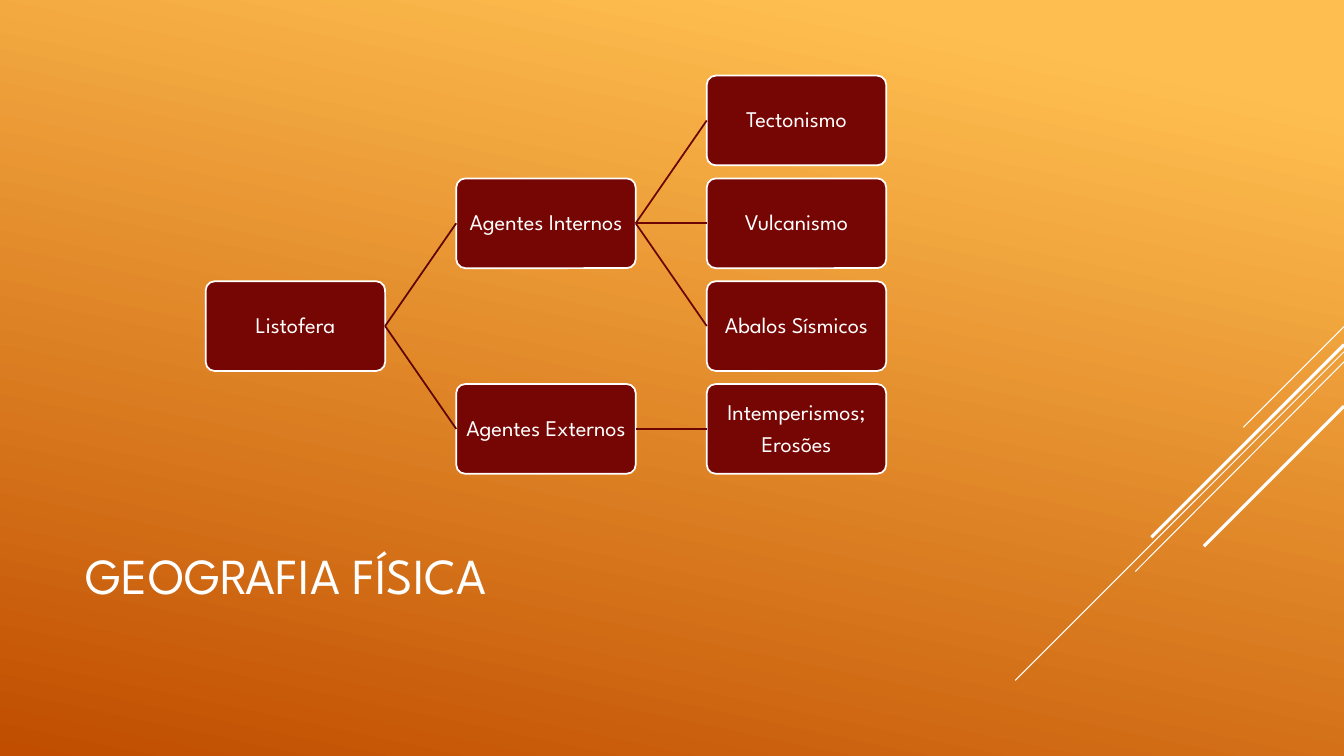
import pptx
import pptx.dml.color
import pptx.enum.shapes
import pptx.enum.text
import pptx.oxml
import pptx.util
from dataclasses import dataclass
from pptx.util import Inches


@dataclass(frozen=True)
class Theme:
    font: str = "League Spartan"
    title_size: int = 36
    box_size: int = 16
    white: str = "FFFFFF"
    box_fill: str = "760603"
    first_link: str = "5E0502"
    second_link: str = "6B0503"
    sky: str = "FFBF50"
    earth: str = "C04D00"


theme = Theme()


def write_text(frame, lines, size, paragraph_format):
    """Fill a text frame with one vertically centred paragraph per line."""
    frame.word_wrap = True
    frame.vertical_anchor = pptx.enum.text.MSO_ANCHOR.MIDDLE
    for index, line in enumerate(lines):
        paragraph = frame.paragraphs[0] if index == 0 else frame.add_paragraph()
        for name, value in paragraph_format.items():
            setattr(paragraph, name, value)
        run = paragraph.add_run()
        run.text = line
        run.font.name = theme.font
        run.font.size = pptx.util.Pt(size)
        run.font.color.rgb = pptx.dml.color.RGBColor.from_string(theme.white)


def add_line(start, end, color, width):
    connector = slide.shapes.add_connector(
        pptx.enum.shapes.MSO_CONNECTOR.STRAIGHT,
        *(Inches(value) for value in (*start, *end)))
    connector.line.color.rgb = pptx.dml.color.RGBColor.from_string(color)
    connector.line.width = pptx.util.Pt(width)
    connector._element.spPr.append(pptx.oxml.parse_xml(
        '<a:effectLst xmlns:a="http://schemas.openxmlformats.org/drawingml/2006/main"/>'))
    return connector


presentation = pptx.Presentation()
presentation.slide_width = Inches(13.33)
presentation.slide_height = Inches(7.5)
slide = presentation.slides.add_slide(presentation.slide_layouts[6])

# Background
background = slide.background.fill
background.gradient()
background.gradient_angle = 258
for stop, position, color in zip(background.gradient_stops, (0.1, 1), (theme.sky, theme.earth)):
    stop.position = position
    stop.color.rgb = pptx.dml.color.RGBColor.from_string(color)

# Diagonal rays from the right edge: top, horizontal and vertical run, width
for top, run_x, run_y, width in [
    (3.24, 1, 1, 0.75),
    (3.49, 3.26, 3.26, 0.75),
    (3.59, 2.07, 2.08, 0.75),
    (3.42, 1.91, 1.91, 2.25),
    (4.03, 1.39, 1.39, 2.25),
]:
    add_line((13.33, top), (13.33 - run_x, top + run_y), theme.white, width)

# Title
title = slide.shapes.add_textbox(Inches(0.75), Inches(4.91), Inches(9.33), Inches(1.65))
write_text(title.text_frame, ["GEOGRAFIA FÍSICA"], theme.title_size, {"line_spacing": 0.9})

# Tree boxes: text lines, column, row
box_width, box_height = 1.78, 0.89
tree_left, tree_top = 2.04, 0.75
column_step, row_step = 2.485, 1.02
box_format = {
    "alignment": pptx.enum.text.PP_ALIGN.CENTER,
    "line_spacing": 0.9,
    "space_after": pptx.util.Pt(0.35 * theme.box_size),
}
boxes = {}
for lines, column, row in [
    (["Listofera"], 0, 2),
    (["Agentes Internos"], 1, 1),
    (["Agentes Externos"], 1, 3),
    (["Tectonismo"], 2, 0),
    (["Vulcanismo"], 2, 1),
    (["Abalos Sísmicos"], 2, 2),
    (["Intemperismos;", "Erosões"], 2, 3),
]:
    box = slide.shapes.add_shape(
        pptx.enum.shapes.MSO_SHAPE.ROUNDED_RECTANGLE,
        Inches(tree_left + column * column_step), Inches(tree_top + row * row_step),
        Inches(box_width), Inches(box_height))
    box.adjustments[0] = 0.1
    box.shadow.inherit = False
    box.fill.solid()
    box.fill.fore_color.rgb = pptx.dml.color.RGBColor.from_string(theme.box_fill)
    box.line.color.rgb = pptx.dml.color.RGBColor.from_string(theme.white)
    box.line.width = pptx.util.Pt(1.25)
    for side in ("left", "top", "right", "bottom"):
        setattr(box.text_frame, f"margin_{side}", Inches(0.01))
    write_text(box.text_frame, lines, theme.box_size, box_format)
    boxes[column, row] = box

# Links from each parent's right side to its children's left sides
for parent, children, color in [
    ((0, 2), [(1, 1), (1, 3)], theme.first_link),
    ((1, 1), [(2, 0), (2, 1), (2, 2)], theme.second_link),
    ((1, 3), [(2, 3)], theme.second_link),
]:
    for child in children:
        link = add_line((0, 0), (0, 0), color, 1.25)
        link.begin_connect(boxes[parent], 3)
        link.end_connect(boxes[child], 1)

presentation.save("out.pptx")
